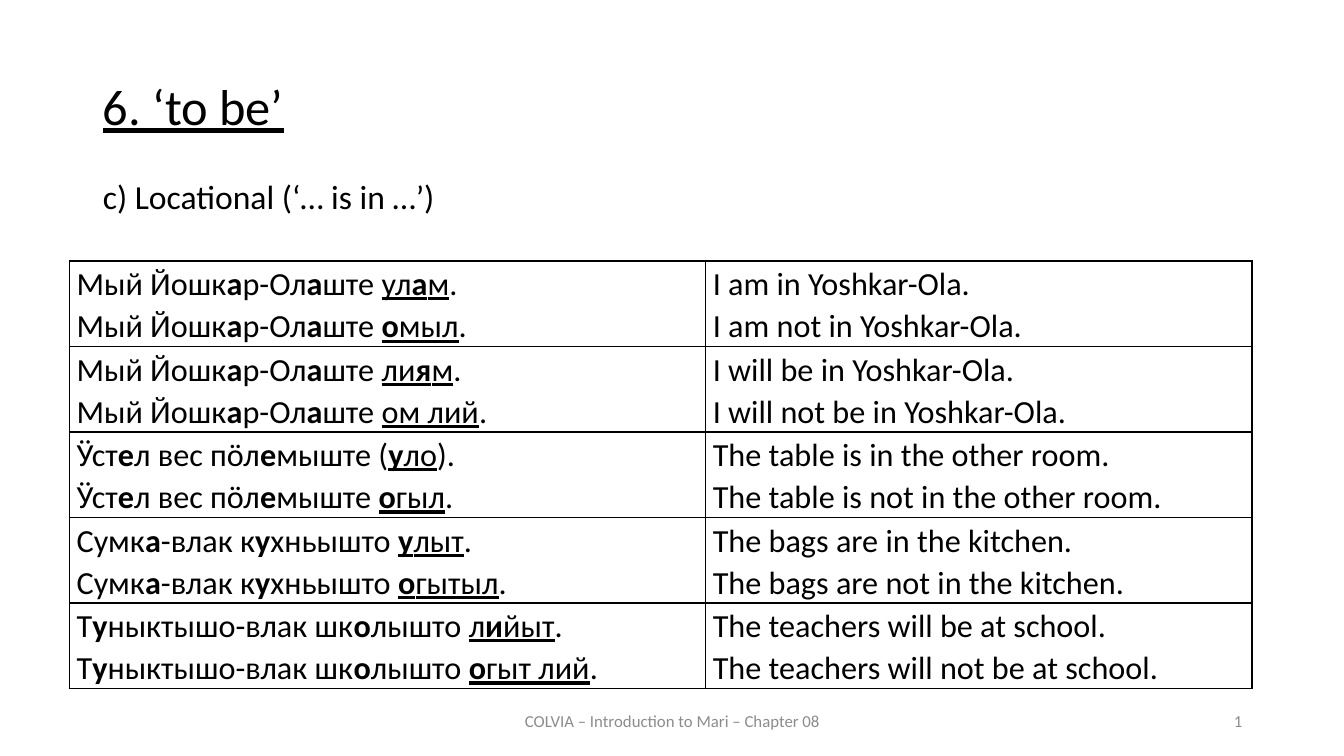
import lxml.etree
import pptx
import pptx.dml.color
import pptx.enum.text
import pptx.oxml
import pptx.oxml.ns
import pptx.util

Inches = pptx.util.Inches
Pt = pptx.util.Pt
ALIGN = pptx.enum.text.PP_ALIGN
ANCHOR = pptx.enum.text.MSO_ANCHOR
qn = pptx.oxml.ns.qn

COLORS = {"text": "000000", "footer": "8C8C8C", "border": "000000"}
FONT = "Calibri"
OUTER_BORDER, INNER_BORDER = 1.5, 1
COLUMN_WIDTHS = (6.31, 5.42)
ROW_HEIGHT = 0.83

# In EXAMPLES, *...* is bold (stress) and _..._ is underlined (verb form).
EXAMPLES = [
    (("Мый Йошк*а*р-Ол*а*ште _ул*а*м_.", "Мый Йошк*а*р-Ол*а*ште _*о*мыл_."),
     ("I am in Yoshkar-Ola.", "I am not in Yoshkar-Ola.")),
    (("Мый Йошк*а*р-Ол*а*ште _ли*я*м_.", "Мый Йошк*а*р-Ол*а*ште _ом лий_."),
     ("I will be in Yoshkar-Ola.", "I will not be in Yoshkar-Ola.")),
    (("Ӱст*е*л вес пӧл*е*мыште (_*у*ло_).", "Ӱст*е*л вес пӧл*е*мыште _*о*гыл_."),
     ("The table is in the other room.", "The table is not in the other room.")),
    (("Сумк*а*-влак к*у*хньышто _*у*лыт_.", "Сумк*а*-влак к*у*хньышто _*о*гытыл_."),
     ("The bags are in the kitchen.", "The bags are not in the kitchen.")),
    (("Т*у*ныктышо-влак шк*о*лышто _л*и*йыт_.", "Т*у*ныктышо-влак шк*о*лышто _*о*гыт лий_."),
     ("The teachers will be at school.", "The teachers will not be at school.")),
]


def apply_format(target, values):
    for name, value in values.items():
        setattr(target, name, value)


def format_font(font, size, color, **values):
    apply_format(font, {"name": FONT, "size": Pt(size), **values})
    font.color.rgb = pptx.dml.color.RGBColor.from_string(COLORS[color])


def add_marked_text(paragraph, marked_text, size):
    for underline_index, part in enumerate(marked_text.split("_")):
        for bold_index, text in enumerate(part.split("*")):
            if text:
                run = paragraph.add_run()
                run.text = text
                format_font(run.font, size, "text", bold=bold_index % 2 == 1,
                            underline=underline_index % 2 == 1)


def place(shape, left, top, width, height):
    apply_format(shape, {"left": Inches(left), "top": Inches(top),
                         "width": Inches(width), "height": Inches(height)})


def fill_placeholder(placeholder, box, text, size, paragraph_format, underline=False):
    place(placeholder, *box)
    apply_format(placeholder.text_frame, {
        "text": text, "word_wrap": True, "vertical_anchor": ANCHOR.TOP,
        "auto_size": pptx.enum.text.MSO_AUTO_SIZE.NONE})
    paragraph = placeholder.text_frame.paragraphs[0]
    apply_format(paragraph, {"line_spacing": 0.9, **paragraph_format})
    format_font(paragraph.runs[0].font, size, "text", underline=underline)
    return paragraph


def remove_bullet(paragraph):
    properties = paragraph._p.get_or_add_pPr()
    properties.set("marL", "0")
    properties.set("indent", "0")
    lxml.etree.SubElement(properties, qn("a:buNone"))


def add_footer_text(slide, box, text, alignment):
    shape = slide.shapes.add_textbox(*map(Inches, box))
    apply_format(shape.text_frame, {"text": text, "word_wrap": True,
                                    "vertical_anchor": ANCHOR.MIDDLE})
    paragraph = shape.text_frame.paragraphs[0]
    paragraph.alignment = alignment
    format_font(paragraph.runs[0].font, 12, "footer")
    return paragraph


def make_slide_number(paragraph):
    run = paragraph.runs[0]._r
    run.tag = qn("a:fld")
    run.set("id", "{B6F15528-21DE-4FAA-801E-634DDDAF4B2B}")
    run.set("type", "slidenum")


def set_borders(cell, widths):
    properties = cell._tc.get_or_add_tcPr()
    for position, (side, width) in enumerate(widths.items()):
        line = pptx.oxml.parse_xml(
            f'<a:{side} xmlns:a="http://schemas.openxmlformats.org/drawingml/2006/main" '
            f'w="{Pt(width)}"><a:solidFill><a:srgbClr val="{COLORS["border"]}"/>'
            f'</a:solidFill></a:{side}>')
        properties.insert(position, line)


def fill_cell(cell, sentences):
    apply_format(cell, {"margin_left": Inches(0.07), "margin_right": Inches(0.07),
                        "margin_top": Inches(0.01), "margin_bottom": 0,
                        "vertical_anchor": ANCHOR.MIDDLE})
    cell.fill.background()
    for index, sentence in enumerate(sentences):
        frame = cell.text_frame
        paragraph = frame.add_paragraph() if index else frame.paragraphs[0]
        paragraph.line_spacing = 1.07
        add_marked_text(paragraph, sentence, 23)


def add_examples_table(slide, left, top):
    row_count, column_count = len(EXAMPLES), len(COLUMN_WIDTHS)
    table = slide.shapes.add_table(
        row_count, column_count, Inches(left), Inches(top),
        Inches(sum(COLUMN_WIDTHS)), Inches(ROW_HEIGHT * row_count)).table
    apply_format(table, {"first_row": False, "horz_banding": False})
    for column, width in zip(table.columns, COLUMN_WIDTHS):
        column.width = Inches(width)
    for row_index, example in enumerate(EXAMPLES):
        for column_index, sentences in enumerate(example):
            cell = table.cell(row_index, column_index)
            fill_cell(cell, sentences)
            on_edge = {"lnL": column_index == 0, "lnR": column_index == column_count - 1,
                       "lnT": row_index == 0, "lnB": row_index == row_count - 1}
            set_borders(cell, {side: OUTER_BORDER if edge else INNER_BORDER
                               for side, edge in on_edge.items()})


def main():
    presentation = pptx.Presentation()
    apply_format(presentation, {"slide_width": Inches(13.33), "slide_height": Inches(7.5)})
    slide = presentation.slides.add_slide(presentation.slide_layouts[1])
    title, body = slide.placeholders
    fill_placeholder(title, (0.92, 0.76, 11.5, 0.83), "6. ‘to be’", 36,
                     {"alignment": ALIGN.JUSTIFY, "space_before": Pt(12)}, underline=True)
    subtitle = fill_placeholder(body, (0.92, 1.74, 11.5, 1.33),
                                "c) Locational (‘… is in …’)", 24, {"space_before": Pt(10)})
    remove_bullet(subtitle)
    add_examples_table(slide, 0.69, 2.59)
    add_footer_text(slide, (4.42, 6.95, 4.5, 0.4),
                    "COLVIA – Introduction to Mari – Chapter 08", ALIGN.CENTER)
    make_slide_number(add_footer_text(slide, (9.42, 6.95, 3, 0.4), "20", ALIGN.RIGHT))
    presentation.save("out.pptx")


if __name__ == "__main__":
    main()
